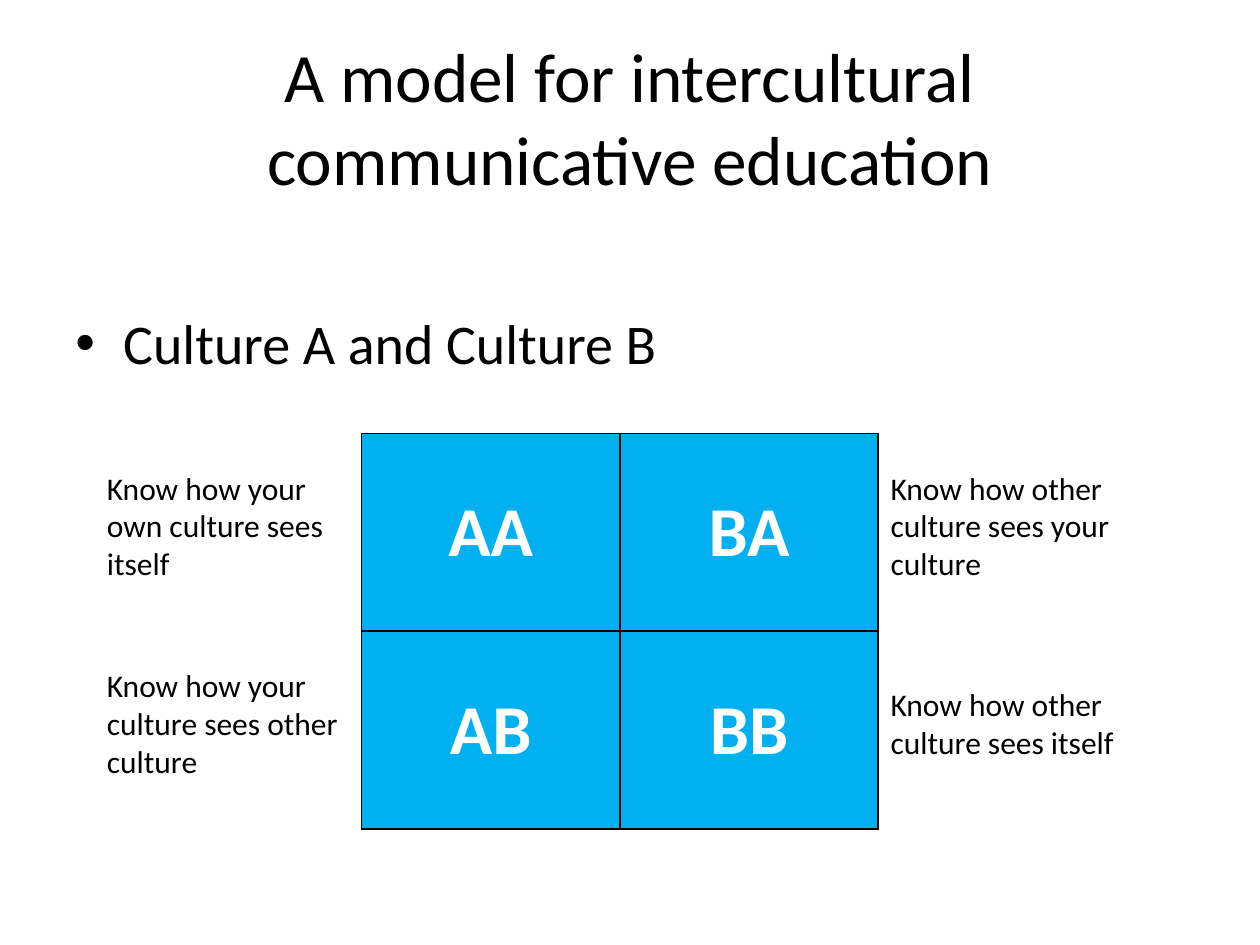
import pptx
import pptx.dml.color
import pptx.enum.text
import pptx.oxml
import pptx.oxml.ns
import pptx.util

COLORS = {"text": "000000", "cell": "00B0F0", "cell_text": "FFFFFF", "border": "000000"}
ALIGN = pptx.enum.text.PP_ALIGN
ANCHOR = pptx.enum.text.MSO_ANCHOR
TABLE_LEFT, TABLE_TOP = 2.87, 3.44
COLUMN_WIDTH, ROW_HEIGHT = 2.05, 1.57
CAPTION_WIDTH, CAPTION_RISE = 2.08, 0.05
CAPTION_LEFTS = (0.75, 6.97)
CELLS = (("AA", "BA"), ("AB", "BB"))
CAPTIONS = (
    (("Know how your own culture sees itself", 1.01),
     ("Know how other culture sees your culture", 1.01)),
    (("Know how your culture sees other culture", 1.01),
     ("Know how other culture sees itself", 0.71)),
)


def inches(*lengths):
    return [pptx.util.Inches(length) for length in lengths]


def write_text(frame, text, size, color="text", bold=False, align=ALIGN.LEFT):
    paragraph = frame.paragraphs[0]
    paragraph.alignment = align
    run = paragraph.add_run()
    run.text = text
    formats = {"name": "Calibri", "size": pptx.util.Pt(size), "bold": bold}
    for name, value in formats.items():
        setattr(run.font, name, value)
    run.font.color.rgb = pptx.dml.color.RGBColor.from_string(COLORS[color])
    return paragraph


def add_title(slide, text):
    title = slide.shapes.title
    title.left, title.top, title.width, title.height = inches(0.5, 0.3, 9, 1.25)
    frame = title.text_frame
    formats = {"word_wrap": True, "vertical_anchor": ANCHOR.MIDDLE,
               "auto_size": pptx.enum.text.MSO_AUTO_SIZE.NONE}
    for name, value in formats.items():
        setattr(frame, name, value)
    write_text(frame, text, 39.6, align=ALIGN.CENTER)


def add_text_box(slide, place, text, size):
    frame = slide.shapes.add_textbox(*inches(*place)).text_frame
    frame.word_wrap = True
    return frame, write_text(frame, text, size)


def add_bullet(slide, text):
    frame, paragraph = add_text_box(slide, (0.5, 1.75, 9, 4.95), text, 32)
    frame.margin_top = pptx.util.Inches(0.7)
    properties = paragraph._p.get_or_add_pPr()
    indent = pptx.util.Inches(0.38)
    properties.set("marL", str(indent))
    properties.set("indent", str(-indent))
    namespace = pptx.oxml.ns.nsdecls("a")
    for markup in (f'<a:buFont {namespace} typeface="Arial"/>',
                   f'<a:buChar {namespace} char="•"/>'):
        properties.append(pptx.oxml.parse_xml(markup))


def add_borders(cell):
    properties = cell._tc.get_or_add_tcPr()
    for position, side in enumerate(("lnL", "lnR", "lnT", "lnB")):
        properties.insert(position, pptx.oxml.parse_xml(
            f'<a:{side} {pptx.oxml.ns.nsdecls("a")} w="{pptx.util.Pt(1)}"><a:solidFill>'
            f'<a:srgbClr val="{COLORS["border"]}"/></a:solidFill></a:{side}>'))


def add_culture_table(slide):
    rows, columns = len(CELLS), len(CELLS[0])
    table = slide.shapes.add_table(rows, columns, *inches(
        TABLE_LEFT, TABLE_TOP, columns * COLUMN_WIDTH, rows * ROW_HEIGHT)).table
    table.first_row = table.horz_banding = False
    for row, labels in enumerate(CELLS):
        for column, label in enumerate(labels):
            cell = table.cell(row, column)
            cell.vertical_anchor = ANCHOR.MIDDLE
            cell.fill.solid()
            cell.fill.fore_color.rgb = pptx.dml.color.RGBColor.from_string(COLORS["cell"])
            write_text(cell.text_frame, label, 40, "cell_text", True, ALIGN.CENTER)
            add_borders(cell)


def add_captions(slide):
    for row, captions in enumerate(CAPTIONS):
        middle = TABLE_TOP + (row + 0.5) * ROW_HEIGHT - CAPTION_RISE
        for left, (text, height) in zip(CAPTION_LEFTS, captions):
            place = (left, middle - height / 2, CAPTION_WIDTH, height)
            add_text_box(slide, place, text, 18)


def main():
    presentation = pptx.Presentation()
    presentation.slide_width, presentation.slide_height = inches(10, 7.5)
    slide = presentation.slides.add_slide(presentation.slide_layouts.get_by_name("Title Only"))
    add_title(slide, "A model for intercultural communicative education")
    add_bullet(slide, "Culture A and Culture B")
    add_culture_table(slide)
    add_captions(slide)
    presentation.save("out.pptx")


if __name__ == "__main__":
    main()
